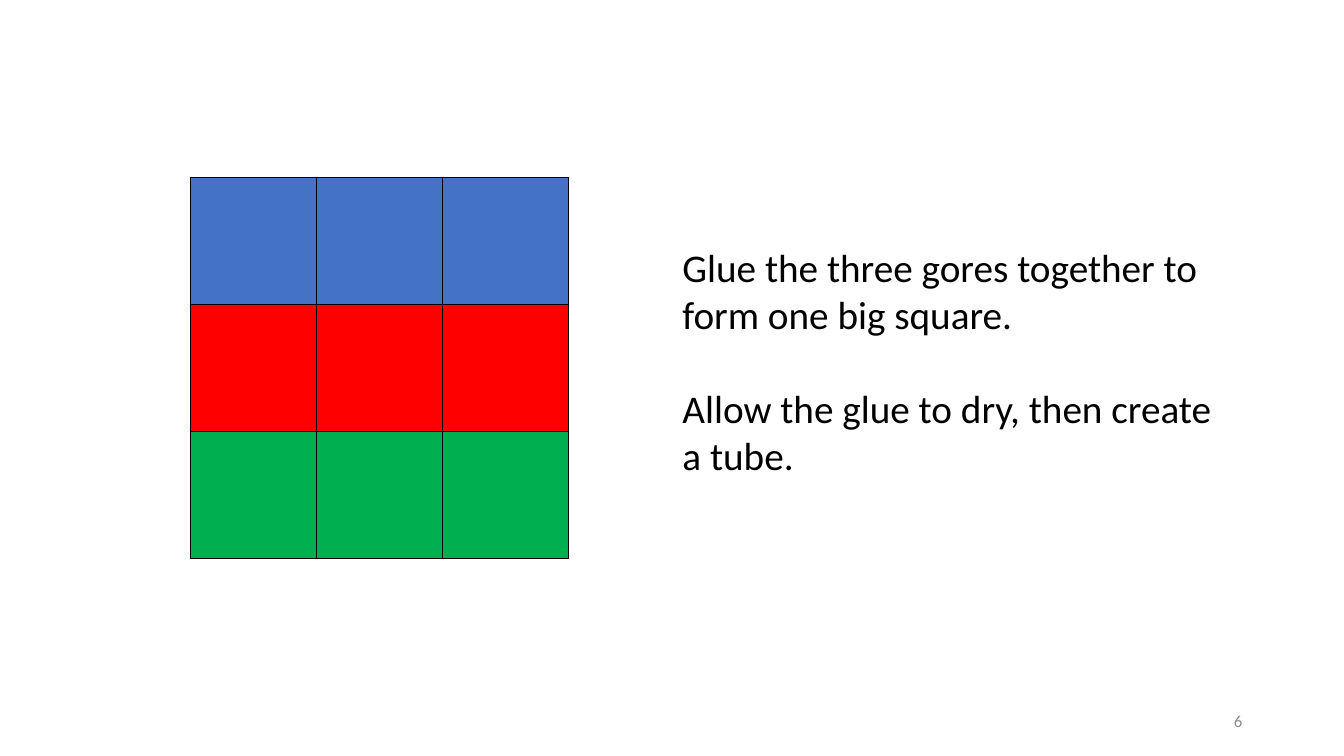
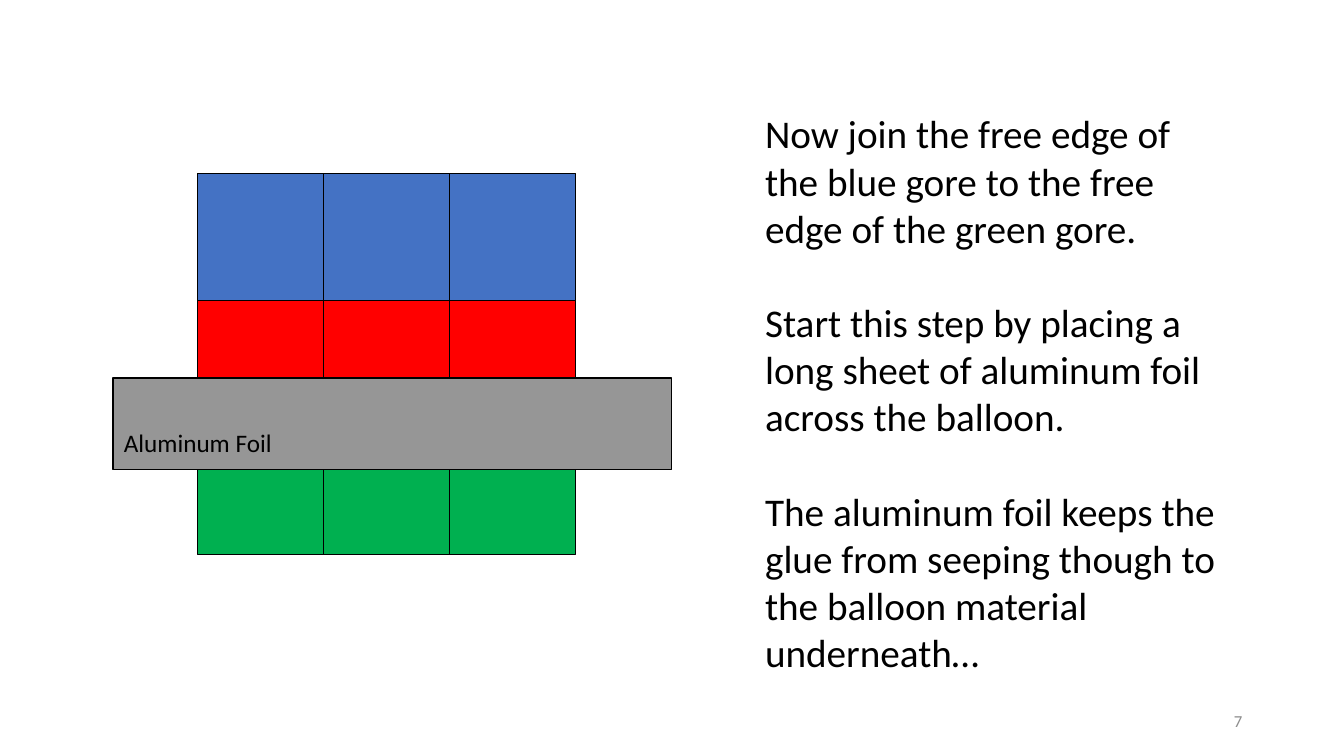
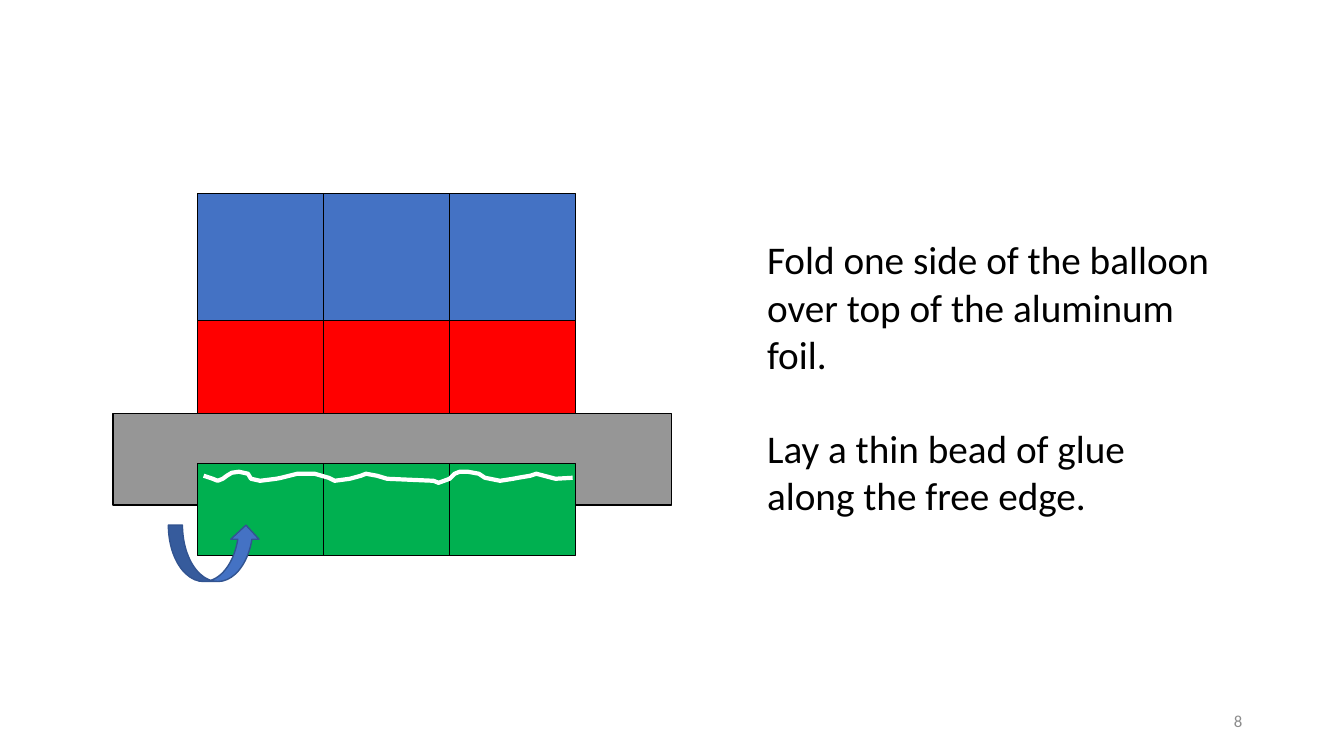
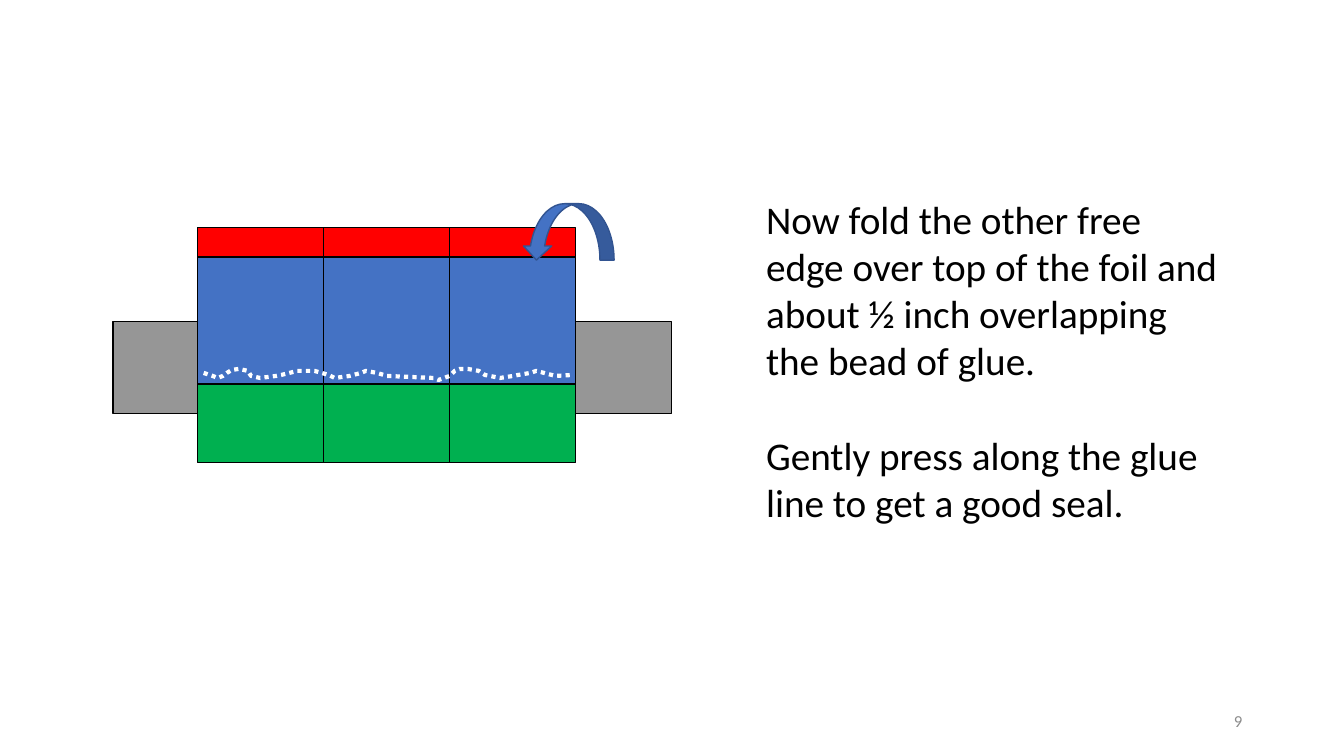
from pptx import Presentation
from pptx.dml.color import RGBColor
from pptx.enum import dml, shapes, text
from pptx.util import Inches, Pt

# Shared look
FONT = "Calibri"
BLUE, RED, GREEN = "4472C4", "FF0000", "00B050"
GRAY, EDGE, INK, PALE, WHITE = "969696", "325491", "000000", "8C8C8C", "FFFFFF"
COL, ROW, FLAP = 1.25, 1.26, 0.91  # gore cell width, full height, folded height
LEFT = 1.96                        # left side of the balloon
FOIL = (1.12, 5.54, 0.91)          # left, width, height

# Bead of glue, in hundredths of an inch from its top left corner
BEAD = [(0, 4), (9, 7), (14, 9), (19, 7), (23, 4), (28, 1), (35, 0), (44, 2),
        (47, 7), (56, 9), (72, 7), (77, 6), (93, 2), (110, 2), (124, 6),
        (130, 9), (145, 7), (156, 4), (161, 2), (172, 4), (182, 7), (228, 9),
        (233, 11), (244, 7), (249, 2), (254, 0), (262, 0), (273, 2), (279, 6),
        (294, 9), (307, 7), (312, 6), (324, 4), (330, 2), (349, 7), (366, 6)]


def color(code):
    return RGBColor.from_string(code)


def paint(shape, fill, line, width=1):
    shape.shadow.inherit = False
    if fill:
        shape.fill.solid()
        shape.fill.fore_color.rgb = color(fill)
    else:
        shape.fill.background()
    shape.line.color.rgb = color(line)
    shape.line.width = Pt(width)


def draw(slide, kind, x, y, w, h, fill, line=INK):
    shape = slide.shapes.add_shape(kind, *map(Inches, (x, y, w, h)))
    paint(shape, fill, line)
    return shape


def write(slide, x, y, w, h, paras, size, ink=INK, gap=0,
          align=text.PP_ALIGN.LEFT, anchor=text.MSO_ANCHOR.TOP):
    frame = slide.shapes.add_textbox(*map(Inches, (x, y, w, h))).text_frame
    frame.word_wrap = True
    frame.vertical_anchor = anchor
    frame.text = "\n".join(paras)
    for para in frame.paragraphs:
        para.alignment = align
        para.space_after = Pt(gap)
        para.font.name = FONT
        para.font.size = Pt(size)
        para.font.color.rgb = color(ink)


# Parts of the balloon
def gore(slide, y, fill, h=ROW, x=LEFT):
    for i in range(3):
        draw(slide, shapes.MSO_SHAPE.RECTANGLE, x + i * COL, y, COL, h, fill)


def square(slide, x, y):
    for i, fill in enumerate((BLUE, RED, GREEN)):
        gore(slide, y + i * ROW, fill, x=x)


def foil(slide, y):
    x, w, h = FOIL
    draw(slide, shapes.MSO_SHAPE.RECTANGLE, x, y, w, h, GRAY)


def folded(slide, red, sheet, green, blue):
    """Balloon folded over the foil; each argument is the top of a part."""
    gore(slide, red, RED)
    foil(slide, sheet)
    gore(slide, green, GREEN, FLAP)
    gore(slide, blue, BLUE)


def glue(slide, y, dash=None):
    build = slide.shapes.build_freeform(*BEAD[0], scale=Inches(0.01))
    build.add_line_segments(BEAD[1:], close=False)
    bead = build.convert_to_shape(Inches(LEFT + 0.06), Inches(y))
    paint(bead, None, WHITE, 3)
    if dash:
        bead.line.dash_style = dash


def arrow(slide, x, y, turn=0):
    kind = shapes.MSO_SHAPE.CURVED_UP_ARROW
    draw(slide, kind, x, y, 0.91, 0.56, BLUE, EDGE).rotation = turn


# One step: instructions at the right and the page number
def step(deck, page, box, *paras):
    slide = deck.slides.add_slide(deck.slide_layouts[6])
    write(slide, *box, paras, 28, gap=34)
    write(slide, 9.42, 6.95, 3, 0.4, [str(page)], 12, PALE,
          align=text.PP_ALIGN.RIGHT, anchor=text.MSO_ANCHOR.MIDDLE)
    return slide


def main():
    deck = Presentation()
    deck.slide_width, deck.slide_height = Inches(13.33), Inches(7.5)

    # Glue the gores
    slide = step(deck, 6, (6.67, 2.36, 5.51, 3.4),
                 "Glue the three gores together to form one big square.",
                 "Allow the glue to dry, then create a tube.")
    square(slide, 1.89, 1.76)

    # Lay the foil
    slide = step(deck, 7, (7.49, 1.04, 4.7, 5.76),
                 "Now join the free edge of the blue gore to the free edge of the green gore.",
                 "Start this step by placing a long sheet of aluminum foil across the balloon.",
                 "The aluminum foil keeps the glue from seeping though to the balloon material underneath…")
    square(slide, LEFT, 1.72)
    foil(slide, 3.75)
    write(slide, 1.13, 4.19, 2.19, 0.4, ["Aluminum Foil"], 18)

    # Fold the green side
    slide = step(deck, 8, (7.51, 2.29, 4.7, 2.93),
                 "Fold one side of the balloon over top of the aluminum foil.",
                 "Lay a thin bead of glue along the free edge.")
    folded(slide, red=3.18, sheet=4.1, green=4.6, blue=1.92)
    glue(slide, 4.68)
    arrow(slide, 1.67, 5.21)

    # Fold the blue side
    slide = step(deck, 9, (7.5, 1.89, 4.7, 3.4),
                 "Now fold the other free edge over top of the foil and about ½ inch overlapping the bead of glue.",
                 "Gently press along the glue line to get a good seal.")
    folded(slide, red=2.26, sheet=3.19, green=3.68, blue=2.55)
    glue(slide, 3.66, dml.MSO_LINE.ROUND_DOT)
    arrow(slide, 5.18, 2.02, 180)

    deck.save("out.pptx")


if __name__ == "__main__":
    main()
